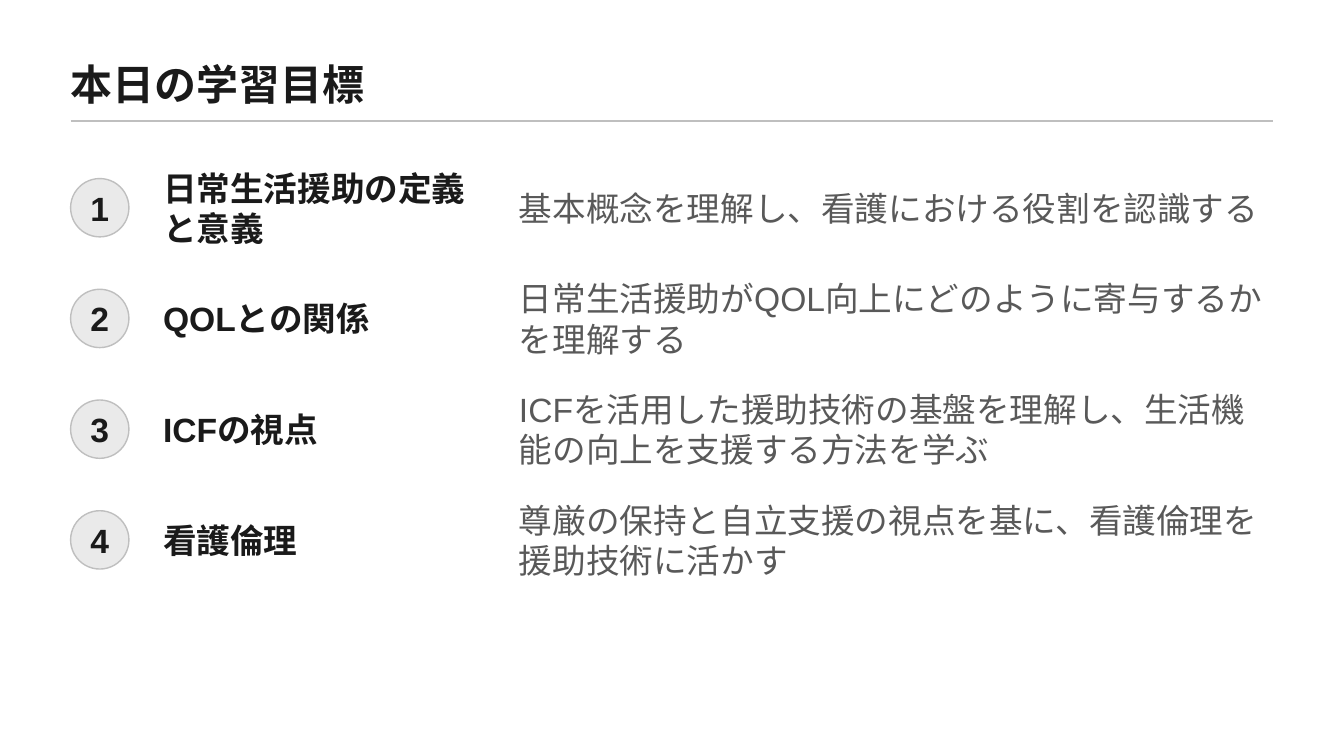
from lxml import etree
from pptx import Presentation
from pptx.dml.color import RGBColor
from pptx.enum.shapes import MSO_CONNECTOR, MSO_SHAPE
from pptx.enum.text import MSO_ANCHOR, PP_ALIGN
from pptx.oxml.ns import qn
from pptx.util import Cm, Pt

STRAIGHT = MSO_CONNECTOR.STRAIGHT
OVAL = MSO_SHAPE.OVAL
MIDDLE = MSO_ANCHOR.MIDDLE
LEFT, CENTER = PP_ALIGN.LEFT, PP_ALIGN.CENTER

COLORS = {"ink": "1A1A1A", "body": "595959", "rule": "BFBFBF", "badge": "EAEAEA"}

# Layout in centimetres
MARGIN = 1.78
CONTENT_WIDTH = 30.3
FIRST_ROW_TOP, ROW_PITCH, ROW_HEIGHT = 4.32, 2.79, 1.83
BADGE_SIZE = 1.47
TOPIC_LEFT, TOPIC_WIDTH = 3.86, 8.89
GOAL_LEFT, GOAL_WIDTH = 12.83, 19.25

GOALS = [
    ("日常生活援助の定義と意義", "基本概念を理解し、看護における役割を認識する"),
    ("QOLとの関係", "日常生活援助がQOL向上にどのように寄与するかを理解する"),
    ("ICFの視点", "ICFを活用した援助技術の基盤を理解し、生活機能の向上を支援する方法を学ぶ"),
    ("看護倫理", "尊厳の保持と自立支援の視点を基に、看護倫理を援助技術に活かす"),
]


class SlideBuilder:
    font_name = "Arial"
    line_width = Pt(1)

    def __init__(self, slide):
        self.shapes = slide.shapes

    def color(self, name):
        return RGBColor.from_string(COLORS[name])

    def outline(self, line):
        line.color.rgb = self.color("rule")
        line.width = self.line_width

    def text(self, words, left, top, width, height, size=24, color="ink",
             bold=True, align=LEFT, inset=True):
        box = self.shapes.add_textbox(Cm(left), Cm(top), Cm(width), Cm(height))
        frame = box.text_frame
        frame.word_wrap = True
        frame.vertical_anchor = MIDDLE
        if not inset:
            frame.margin_left = frame.margin_right = 0
            frame.margin_top = frame.margin_bottom = 0
        paragraph = frame.paragraphs[0]
        paragraph.text = words
        paragraph.alignment = align
        font = paragraph.font
        font.name, font.size, font.bold = self.font_name, Pt(size), bold
        font.color.rgb = self.color(color)

    def rule(self, left, top, width):
        line = self.shapes.add_connector(
            STRAIGHT, Cm(left), Cm(top), Cm(left + width), Cm(top))
        self.outline(line.line)
        etree.SubElement(line._element.spPr, qn("a:effectLst"))

    def badge(self, number, left, top, size):
        circle = self.shapes.add_shape(OVAL, Cm(left), Cm(top), Cm(size), Cm(size))
        circle.shadow.inherit = False
        circle.fill.solid()
        circle.fill.fore_color.rgb = self.color("badge")
        self.outline(circle.line)
        self.text(str(number), left, top, size, size, align=CENTER)


def main():
    deck = Presentation()
    deck.slide_width, deck.slide_height = Cm(33.87), Cm(19.05)
    page = SlideBuilder(deck.slides.add_slide(deck.slide_layouts[6]))

    # Title and rule
    page.text("本日の学習目標", MARGIN, 1.07, CONTENT_WIDTH, 2.08, size=30, inset=False)
    page.rule(MARGIN, 3.05, CONTENT_WIDTH)

    # Numbered goals
    for index, (topic, goal) in enumerate(GOALS):
        top = FIRST_ROW_TOP + index * ROW_PITCH
        badge_top = top + (ROW_HEIGHT - BADGE_SIZE) / 2
        page.badge(index + 1, MARGIN, badge_top, BADGE_SIZE)
        page.text(topic, TOPIC_LEFT, top, TOPIC_WIDTH, ROW_HEIGHT)
        page.text(goal, GOAL_LEFT, top, GOAL_WIDTH, ROW_HEIGHT, color="body", bold=False)

    deck.save("out.pptx")


if __name__ == "__main__":
    main()
